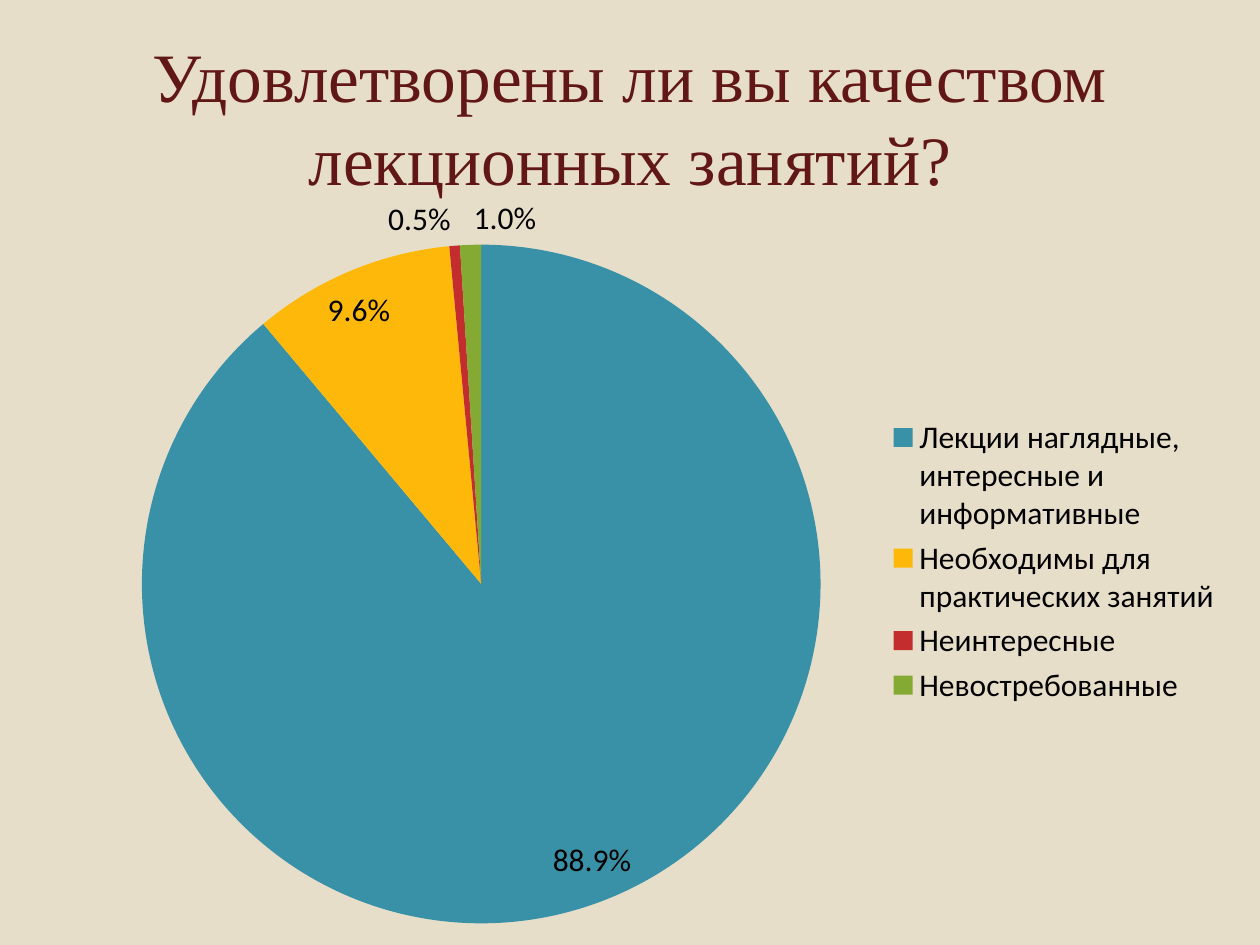
from lxml.etree import SubElement
from pptx import Presentation
from pptx.chart.data import CategoryChartData
from pptx.dml.color import RGBColor
from pptx.enum.chart import XL_CHART_TYPE, XL_LABEL_POSITION, XL_LEGEND_POSITION
from pptx.enum.text import MSO_ANCHOR, PP_ALIGN
from pptx.oxml.ns import qn
from pptx.util import Inches, Pt

WIDTH, HEIGHT = 10, 7.5
TITLE_BOX = (0.05, 0.04, 0.9, 1 / 6)
CHART_BOX = (0.067, 0.192, 0.913, 0.804)
PIE_LAYOUT = {"x": 0.05, "y": 0.08, "w": 0.59, "h": 0.9}
TITLE = "Удовлетворены ли вы качеством лекционных занятий?"
ANSWERS = {
    "Лекции наглядные, интересные и информативные": (88.9, "3891A7"),
    "Необходимы для практических занятий": (9.6, "FEB80A"),
    "Неинтересные": (0.5, "C32D2E"),
    "Невостребованные": (1, "84AA33"),
}


def color(value):
    """Turn a hex string into a colour."""
    return RGBColor.from_string(value)


def place(box):
    """Turn shares of the slide's size into lengths."""
    return [Inches(share * size) for share, size in zip(box, (WIDTH, HEIGHT) * 2)]


def apply_format(target, values):
    """Set each named attribute on the target."""
    for name, value in values.items():
        setattr(target, name, value)


def paint(fill, value):
    """Give a fill one solid colour."""
    fill.solid()
    fill.fore_color.rgb = color(value)


def format_font(font, name, size, value):
    """Set the typeface, size and colour of a font."""
    apply_format(font, {"name": name, "size": Pt(size), "bold": False})
    font.color.rgb = color(value)


def add_title(slide, box):
    """Write the centred question in its box."""
    frame = slide.shapes.add_textbox(*place(box)).text_frame
    apply_format(frame, {"word_wrap": True, "vertical_anchor": MSO_ANCHOR.MIDDLE})
    paragraph = frame.paragraphs[0]
    apply_format(paragraph, {"text": TITLE, "alignment": PP_ALIGN.CENTER})
    format_font(paragraph.runs[0].font, "Times New Roman", 39.6, "621717")


def set_plot_layout(chart, shares):
    """Fix the inner plot area at shares of the chart's size."""
    plot_area = chart._chartSpace.find(".//" + qn("c:plotArea"))
    for old_layout in plot_area.findall(qn("c:layout")):
        plot_area.remove(old_layout)
    layout = SubElement(plot_area, qn("c:layout"))
    plot_area.insert(0, layout)
    manual = SubElement(layout, qn("c:manualLayout"))
    settings = {"layoutTarget": "inner", "xMode": "edge", "yMode": "edge", **shares}
    for name, value in settings.items():
        SubElement(manual, qn("c:" + name)).set("val", str(value))


def add_answer_pie(slide, box):
    """Draw the answers as a pie with a legend on the right."""
    data = CategoryChartData()
    data.categories = list(ANSWERS)
    data.add_series("Series 1", [share for share, _ in ANSWERS.values()])
    chart = slide.shapes.add_chart(XL_CHART_TYPE.PIE, *place(box), data).chart
    apply_format(chart, {"has_title": False, "has_legend": True})
    format_font(chart.font, "Calibri", 18, "000000")
    apply_format(chart.legend, {
        "position": XL_LEGEND_POSITION.RIGHT, "include_in_layout": False})
    plot = chart.plots[0]
    apply_format(plot, {"vary_by_categories": True, "has_data_labels": True})
    apply_format(plot.data_labels, {
        "show_percentage": True, "show_value": False, "number_format": "0.0%",
        "number_format_is_linked": False, "position": XL_LABEL_POSITION.BEST_FIT})
    for index, (_, value) in enumerate(ANSWERS.values()):
        paint(plot.series[0].points[index].format.fill, value)
    set_plot_layout(chart, PIE_LAYOUT)


def main():
    """Build the survey slide and save it."""
    presentation = Presentation()
    apply_format(presentation, {
        "slide_width": Inches(WIDTH), "slide_height": Inches(HEIGHT)})
    slide = presentation.slides.add_slide(presentation.slide_layouts[6])
    paint(slide.background.fill, "E7DEC9")
    add_title(slide, TITLE_BOX)
    add_answer_pie(slide, CHART_BOX)
    presentation.save("out.pptx")


if __name__ == "__main__":
    main()
